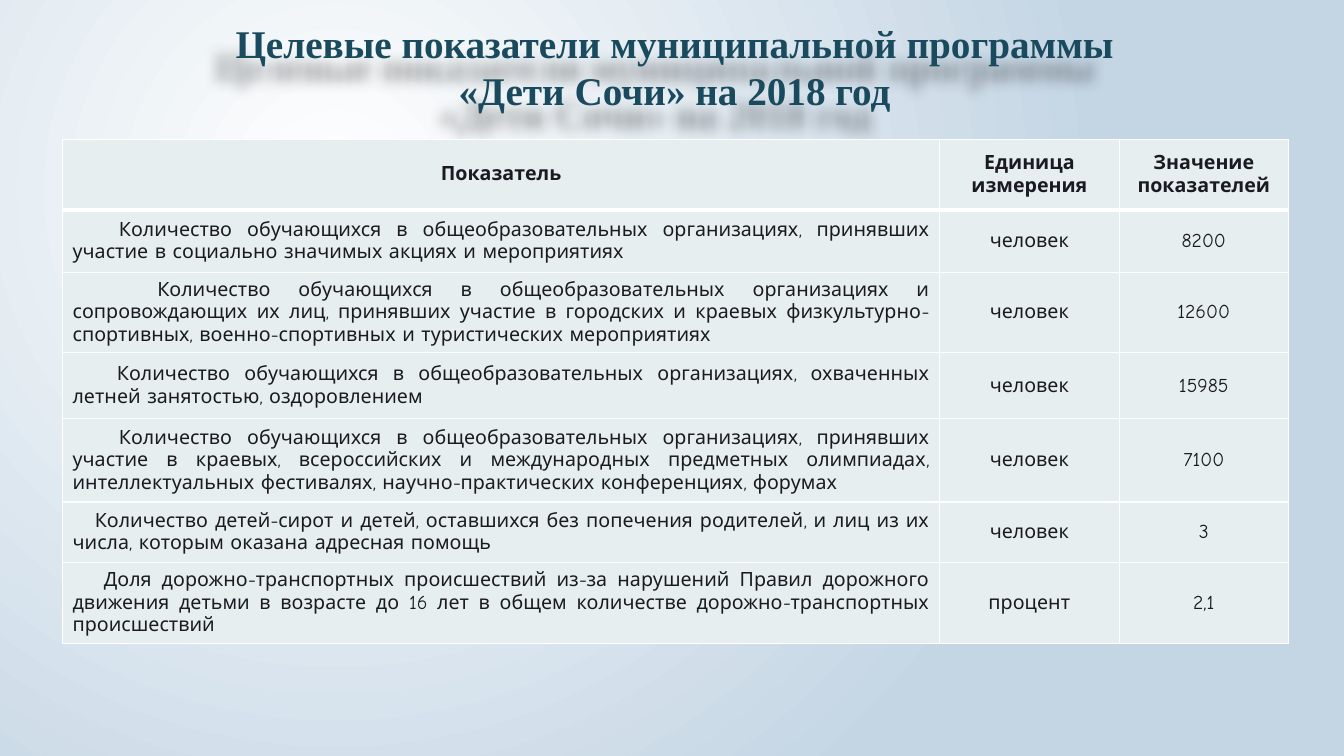
from dataclasses import dataclass

from lxml import etree
from pptx import Presentation
from pptx.dml.color import RGBColor
from pptx.enum.text import MSO_ANCHOR, MSO_AUTO_SIZE, PP_ALIGN
from pptx.oxml.ns import qn
from pptx.util import Inches, Pt

MIDDLE = MSO_ANCHOR.MIDDLE
GROW = MSO_AUTO_SIZE.SHAPE_TO_FIT_TEXT
CENTER, JUSTIFY = PP_ALIGN.CENTER, PP_ALIGN.JUSTIFY


@dataclass(frozen=True)
class Theme:
    title_color: str = "1A4A5D"
    text_color: str = "1B1A22"
    cell_color: str = "E6EEF0"
    border_color: str = "FFFFFF"
    glow_color: str = "FFFFFF"
    edge_color: str = "C4D5E4"
    shadow_color: str = "000000"
    title_font: str = "Times New Roman"
    table_font: str = "Comic Neue"
    title_size: int = 28
    table_size: int = 14
    thin_border: int = 1
    header_border: int = 3


THEME = Theme()
TITLE = "Целевые показатели муниципальной программы «Дети Сочи» на 2018 год"
HEADERS = ("Показатель", "Единица измерения", "Значение показателей")
COLUMN_WIDTHS = (8.7, 1.78, 1.68)
HEADER_HEIGHT = 0.7

# Row height, first-line indent, indicator, unit, value
INDICATORS = (
    (0.62, 0.46, "Количество обучающихся в общеобразовательных организациях, принявших "
     "участие в социально значимых акциях и мероприятиях", "человек", "8200"),
    (0.8, 0.84, "Количество обучающихся в общеобразовательных организациях и "
     "сопровождающих их лиц, принявших участие в городских и краевых "
     "физкультурно-спортивных, военно-спортивных и туристических мероприятиях",
     "человек", "12600"),
    (0.65, 0.44, "Количество обучающихся в общеобразовательных организациях, охваченных "
     "летней занятостью, оздоровлением", "человек", "15985"),
    (0.83, 0.46, "Количество обучающихся в общеобразовательных организациях, принявших "
     "участие в краевых, всероссийских и международных предметных олимпиадах, "
     "интеллектуальных фестивалях, научно-практических конференциях, форумах",
     "человек", "7100"),
    (0.6, 0.22, "Количество детей-сирот и детей, оставшихся без попечения родителей, и лиц "
     "из их числа, которым оказана адресная помощь", "человек", "3"),
    (0.8, 0.31, "Доля дорожно-транспортных происшествий из-за нарушений Правил дорожного "
     "движения детьми в возрасте до 16 лет в общем количестве дорожно-транспортных "
     "происшествий", "процент", "2,1"),
)


def add_color(parent, color):
    return etree.SubElement(parent, qn("a:srgbClr"), val=color)


def set_background(slide):
    """Radial gradient whose light centre lies in the upper left quarter."""
    fill = slide.background.fill
    fill.gradient()
    for stop, color in zip(fill.gradient_stops, (THEME.glow_color, THEME.edge_color)):
        stop.color.rgb = RGBColor.from_string(color)
    gradient = next(slide.element.iter(qn("a:gradFill")))
    linear = gradient.find(qn("a:lin"))
    radial = etree.Element(qn("a:path"), path="circle")
    etree.SubElement(radial, qn("a:fillToRect"), l="50000", t="50000", r="100000", b="100000")
    gradient.replace(linear, radial)


def format_text(text_frame, font_name, size, color, bold, alignment):
    paragraph = text_frame.paragraphs[0]
    paragraph.alignment = alignment
    font = paragraph.runs[0].font
    font.name, font.size, font.bold = font_name, Pt(size), bold
    font.color.rgb = RGBColor.from_string(color)
    return paragraph


def add_shadow(shape):
    """Soft shadow falling to the lower left of the text."""
    effects = etree.SubElement(shape.element.spPr, qn("a:effectLst"))
    shadow = etree.SubElement(effects, qn("a:outerShdw"), blurRad=str(Pt(10)),
                              dist=str(Inches(0.3)), dir="8100000", algn="tr",
                              rotWithShape="0")
    etree.SubElement(add_color(shadow, THEME.shadow_color), qn("a:alpha"), val="40000")


def add_title(slide):
    shape = slide.shapes.add_textbox(Inches(1.93), Inches(0.14), Inches(9.52), Inches(1.04))
    text_frame = shape.text_frame
    text_frame.word_wrap = True
    text_frame.auto_size = GROW
    text_frame.vertical_anchor = MIDDLE
    text_frame.text = TITLE
    format_text(text_frame, THEME.title_font, THEME.title_size, THEME.title_color, True, CENTER)
    add_shadow(shape)


def set_borders(cell, top, bottom):
    properties = cell._tc.get_or_add_tcPr()
    widths = (("L", THEME.thin_border), ("R", THEME.thin_border), ("T", top), ("B", bottom))
    for position, (side, width) in enumerate(widths):
        line = etree.Element(qn(f"a:ln{side}"), w=str(Pt(width)))
        add_color(etree.SubElement(line, qn("a:solidFill")), THEME.border_color)
        properties.insert(position, line)


def fill_cell(cell, text, row_index, alignment=CENTER, indent=0):
    cell.text = text
    cell.vertical_anchor = MIDDLE
    cell.fill.solid()
    cell.fill.fore_color.rgb = RGBColor.from_string(THEME.cell_color)
    paragraph = format_text(cell.text_frame, THEME.table_font, THEME.table_size,
                            THEME.text_color, row_index == 0, alignment)
    if indent:
        paragraph._p.get_or_add_pPr().set("indent", str(Inches(indent)))
    set_borders(cell,
                top=THEME.header_border if row_index == 1 else THEME.thin_border,
                bottom=THEME.header_border if row_index == 0 else THEME.thin_border)


def add_indicator_table(slide):
    heights = [HEADER_HEIGHT] + [indicator[0] for indicator in INDICATORS]
    table = slide.shapes.add_table(len(heights), len(COLUMN_WIDTHS), Inches(0.62), Inches(1.38),
                                   Inches(sum(COLUMN_WIDTHS)), Inches(sum(heights))).table
    table.horz_banding = False
    for column, width in zip(table.columns, COLUMN_WIDTHS):
        column.width = Inches(width)
    for row, height in zip(table.rows, heights):
        row.height = Inches(height)
    for column_index, header in enumerate(HEADERS):
        fill_cell(table.cell(0, column_index), header, 0)
    for row_index, (_, indent, name, unit, value) in enumerate(INDICATORS, start=1):
        fill_cell(table.cell(row_index, 0), name, row_index, JUSTIFY, indent)
        fill_cell(table.cell(row_index, 1), unit, row_index)
        fill_cell(table.cell(row_index, 2), value, row_index)


def main():
    presentation = Presentation()
    presentation.slide_width = Inches(13.33)
    presentation.slide_height = Inches(7.5)
    slide = presentation.slides.add_slide(presentation.slide_layouts[6])
    set_background(slide)
    add_title(slide)
    add_indicator_table(slide)
    presentation.save("out.pptx")


if __name__ == "__main__":
    main()
